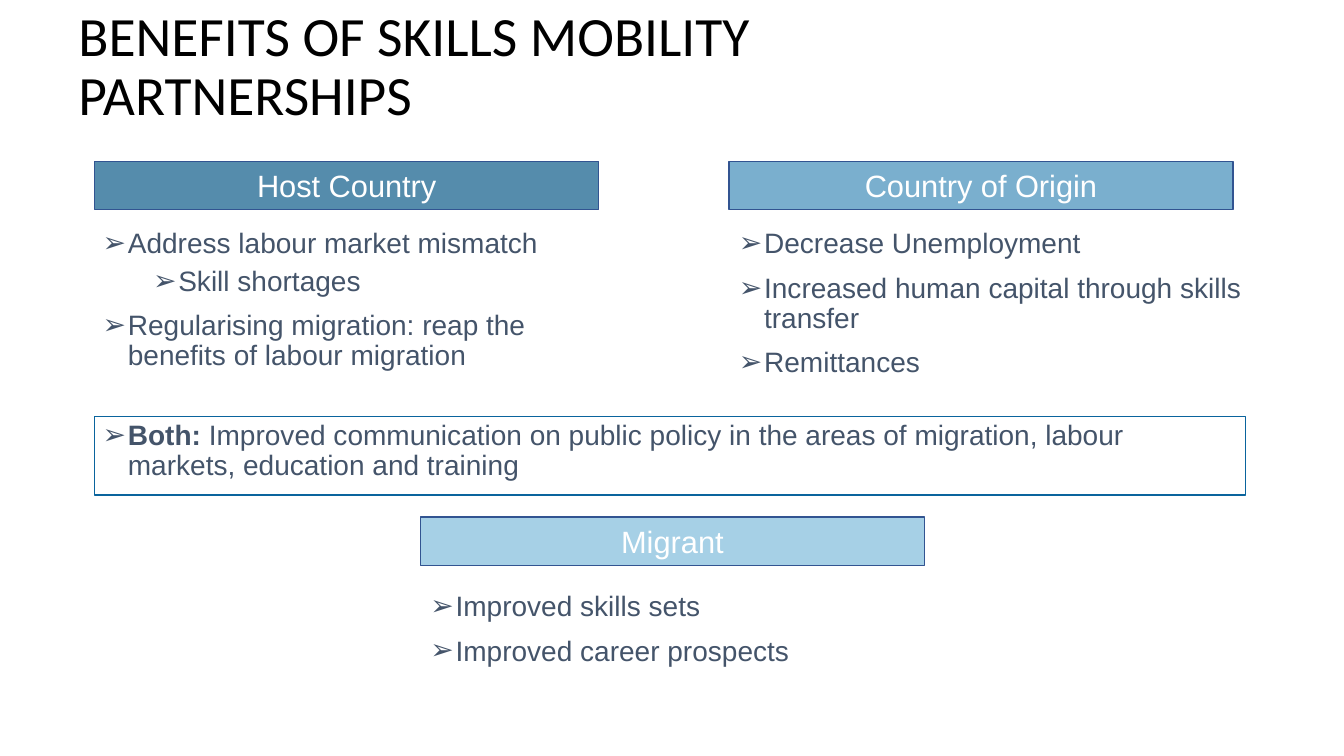
from lxml import etree
from pptx import Presentation
from pptx import util as u
from pptx.dml.color import RGBColor
from pptx.enum import shapes, text
from pptx.oxml.ns import qn

HUES = {
    "title": "000000", "body": "44546A", "head": "FFFFFF", "edge": "325491",
    "host": "558CAC", "origin": "7AAFCE", "migrant": "A6D0E6", "frame": "0A649D",
}
HEAD_W, HEAD_H = 37.5, 6.4

deck = Presentation()
deck.slide_width, deck.slide_height = u.Inches(13.33), u.Inches(7.5)
slide = deck.slides.add_slide(deck.slide_layouts[6])


def hue(name):
    return RGBColor.from_string(HUES[name])


def scale(x, y, w, h):
    """Turn percentages of the slide's width and height into lengths."""
    col, row = deck.slide_width / 100, deck.slide_height / 100
    return int(x * col), int(y * row), int(w * col), int(h * row)


def style(para, size, color, face="Arial"):
    para.font.size, para.font.name = u.Pt(size), face
    para.font.color.rgb = hue(color)


def add_text(box):
    frame = slide.shapes.add_textbox(*scale(*box)).text_frame
    frame.word_wrap = True
    return frame


def add_rect(box, edge, fill=None):
    rect = slide.shapes.add_shape(shapes.MSO_SHAPE.RECTANGLE, *scale(*box))
    rect.shadow.inherit = False
    rect.line.color.rgb, rect.line.width = hue(edge), u.Pt(1)
    if fill:
        rect.fill.solid()
        rect.fill.fore_color.rgb = hue(fill)
    else:
        rect.fill.background()
    return rect


def add_title(box, words):
    frame = add_text(box)
    frame.vertical_anchor = text.MSO_ANCHOR.MIDDLE
    para = frame.paragraphs[0]
    para.text, para.line_spacing = words, 0.9
    style(para, 39.6, "title", "Calibri")


def add_list(box, items):
    """Each item is a level and its runs, given as (words, bold)."""
    frame = add_text(box)
    for i, (level, runs) in enumerate(items):
        para = frame.add_paragraph() if i else frame.paragraphs[0]
        para.level, para.line_spacing = level, 0.9
        para.space_before = u.Pt((5 if level else 10) if i else 0)
        props = para._p.get_or_add_pPr()
        props.set("marL", str(u.Inches(0.25 + 0.5 * level)))
        props.set("indent", str(u.Inches(-0.25)))
        etree.SubElement(props, qn("a:buFont")).set("typeface", "Arial")
        etree.SubElement(props, qn("a:buChar")).set("char", "➢")
        for words, bold in runs:
            run = para.add_run()
            run.text = words
            if bold:
                run.font.bold = True
        style(para, 20, "body")


def add_group(box, name, fill, items, gap=8.4, shift=0):
    """A heading bar with its list, gap below the bar's top."""
    x, y, w, h = box
    frame = add_rect((x, y, HEAD_W, HEAD_H), "edge", fill).text_frame
    frame.vertical_anchor = text.MSO_ANCHOR.MIDDLE
    para = frame.paragraphs[0]
    para.text, para.alignment = name, text.PP_ALIGN.CENTER
    style(para, 22, "head")
    add_list((x + shift, y + gap, w, h - gap),
             [(level, [(words, False)]) for level, words in items])


def add_both(box, runs):
    x, y, w, h = box
    add_list((x - 0.15, y, w, h), [(0, runs)])
    add_rect(box, "frame")


add_title((5.1, 2, 76, 14), "BENEFITS OF SKILLS MOBILITY PARTNERSHIPS")
add_group((7.05, 21.33, 38.93, 33.73), "Host Country", "host", [
    (0, "Address labour market mismatch"),
    (1, "Skill shortages"),
    (0, "Regularising migration: reap the benefits of labour migration"),
], shift=-0.15)
add_group((54.24, 21.33, 43.13, 38.67), "Country of Origin", "origin", [
    (0, "Decrease Unemployment"),
    (0, "Increased human capital through skills transfer"),
    (0, "Remittances"),
])
add_group((31.28, 68.4, HEAD_W, 27.87), "Migrant", "migrant", [
    (0, "Improved skills sets"),
    (0, "Improved career prospects"),
], gap=9.33)
add_both((7.05, 55.07, 85.6, 10.4), [
    ("Both:", True),
    (" Improved communication on public policy in the areas of migration, "
     "labour markets, education and training", False),
])

deck.save("out.pptx")
